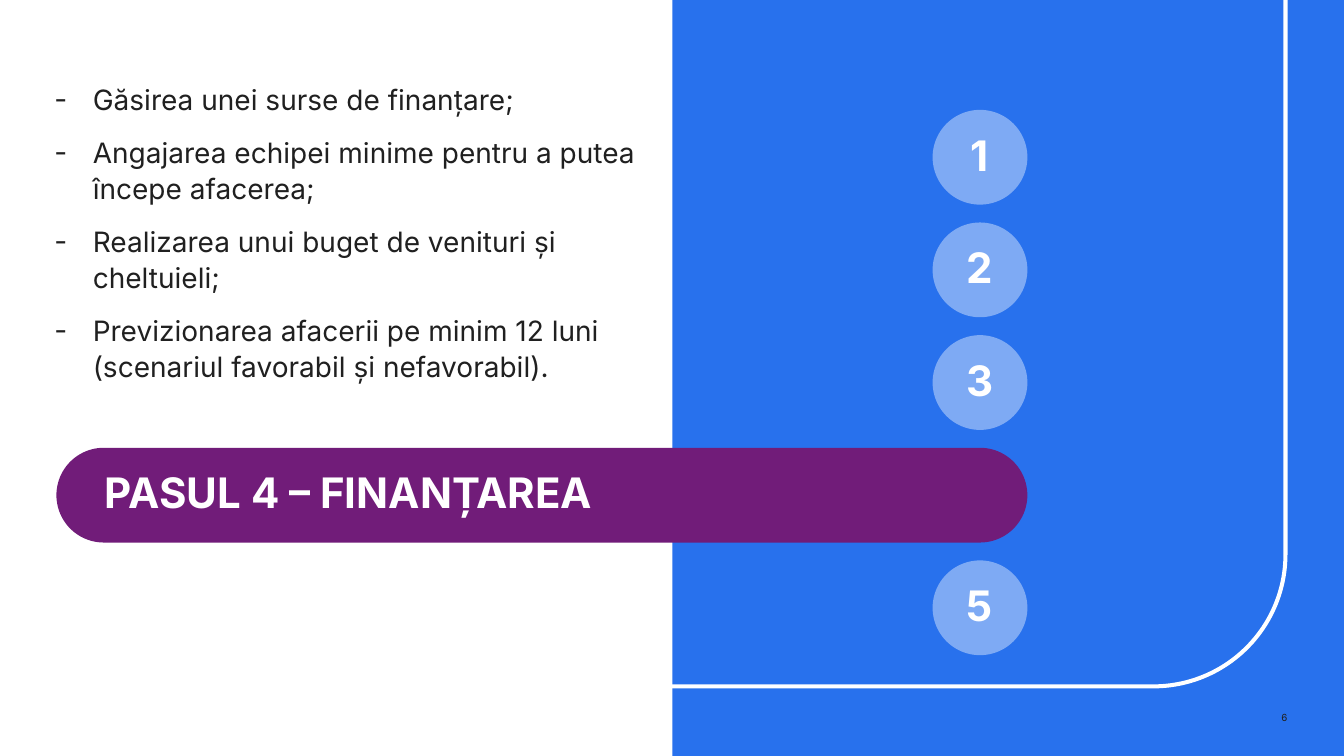
import math
from dataclasses import dataclass

from lxml import etree
from pptx import Presentation
from pptx.dml.color import RGBColor
from pptx.enum import shapes, text
from pptx.oxml import ns
from pptx.util import Inches, Pt


@dataclass(frozen=True)
class Theme:
    font: str = "Inter"
    white: RGBColor = RGBColor(0xFF, 0xFF, 0xFF)
    ink: RGBColor = RGBColor(0x20, 0x20, 0x20)
    blue: RGBColor = RGBColor(0x28, 0x71, 0xED)
    light_blue: RGBColor = RGBColor(0x7E, 0xAA, 0xF4)
    purple: RGBColor = RGBColor(0x71, 0x1C, 0x79)
    heading: int = 30
    body: int = 20
    small: int = 7


@dataclass(frozen=True)
class Box:
    left: float
    top: float
    width: float
    height: float

    def emu(self):
        return [Inches(v) for v in (self.left, self.top, self.width, self.height)]


THEME = Theme()
STEP_COUNT = 5
CURRENT_STEP = 4
TASKS = [
    "Găsirea unei surse de finanțare;",
    "Angajarea echipei minime pentru a putea începe afacerea;",
    "Realizarea unui buget de venituri și cheltuieli;",
    "Previzionarea afacerii pe minim 12 luni (scenariul favorabil și nefavorabil).",
]


def paint(shape, color):
    shape.shadow.inherit = False
    shape.fill.solid()
    shape.fill.fore_color.rgb = color
    shape.line.fill.background()


def add_filled(slide, kind, box, color):
    shape = slide.shapes.add_shape(kind, *box.emu())
    paint(shape, color)
    return shape


def place(shape, box):
    shape.left, shape.top, shape.width, shape.height = box.emu()


def prepare_frame(frame, anchor=text.MSO_ANCHOR.TOP):
    frame.margin_left = frame.margin_top = frame.margin_right = frame.margin_bottom = 0
    frame.word_wrap = True
    frame.auto_size = text.MSO_AUTO_SIZE.NONE
    frame.vertical_anchor = anchor


def style(paragraph, size, color, align, bold=False, spacing=1.0):
    paragraph.alignment = align
    paragraph.line_spacing = spacing
    paragraph.space_before = Pt(0)
    font = paragraph.font
    font.name, font.size, font.bold = THEME.font, Pt(size), bold
    font.color.rgb = color


def add_dash(paragraph, indent):
    properties = paragraph._p.get_or_add_pPr()
    properties.set("marL", str(Inches(indent)))
    properties.set("indent", str(-Inches(indent)))
    etree.SubElement(properties, ns.qn("a:buFont"), typeface=THEME.font)
    etree.SubElement(properties, ns.qn("a:buChar"), char="-")


def add_frame_line(slide, box, radius=1.33, thickness=0.04):
    """White line along the right and bottom edges, with a round corner."""
    right, bottom = box.left + box.width, box.top + box.height
    center_x, center_y = right - radius, bottom - radius
    angles = [math.radians(degree) for degree in range(0, 91, 2)]

    def corner(r, order):
        return [(center_x + r * math.cos(a), center_y + r * math.sin(a)) for a in order]

    inner = radius - thickness
    points = [
        (right, box.top),
        *corner(radius, angles),
        (box.left, bottom),
        (box.left, bottom - thickness),
        *corner(inner, reversed(angles)),
        (right - thickness, box.top),
    ]
    points = [(Inches(x), Inches(y)) for x, y in points]
    builder = slide.shapes.build_freeform(*points[0])
    builder.add_line_segments(points[1:], close=True)
    paint(builder.convert_to_shape(), THEME.white)


def add_tasks(slide, box):
    body = slide.placeholders[1]
    place(body, box)
    frame = body.text_frame
    prepare_frame(frame)
    frame.text = "\n".join(TASKS)
    for paragraph in frame.paragraphs:
        add_dash(paragraph, 0.38)
        paragraph.space_after = Pt(12)
        style(paragraph, THEME.body, THEME.ink, text.PP_ALIGN.LEFT, spacing=1.07)


def add_step_bar(slide, box):
    bar = add_filled(slide, shapes.MSO_SHAPE.ROUNDED_RECTANGLE, box, THEME.purple)
    bar.adjustments[0] = 0.5
    title = slide.shapes.title
    place(title, Box(box.left + 0.48, box.top + 0.23, box.width - 0.94, 0.48))
    prepare_frame(title.text_frame)
    title.text_frame.text = f"PASUL {CURRENT_STEP} – FINANȚAREA"
    style(title.text_frame.paragraphs[0], THEME.heading, THEME.white,
          text.PP_ALIGN.LEFT, bold=True, spacing=0.92)
    bar._element.addnext(title._element)  # keep the title above its bar


def add_steps(slide, box, bar_left):
    """Column of numbered circles; the current step is a bar reaching left."""
    size = box.width
    pitch = (box.height - size) / (STEP_COUNT - 1)
    for step in range(1, STEP_COUNT + 1):
        top = box.top + (step - 1) * pitch
        if step == CURRENT_STEP:
            add_step_bar(slide, Box(bar_left, top, box.left + size - bar_left, size))
            continue
        circle = add_filled(slide, shapes.MSO_SHAPE.OVAL,
                            Box(box.left, top, size, size), THEME.light_blue)
        prepare_frame(circle.text_frame, text.MSO_ANCHOR.MIDDLE)
        circle.text_frame.text = str(step)
        style(circle.text_frame.paragraphs[0], THEME.heading, THEME.white,
              text.PP_ALIGN.CENTER, bold=True, spacing=0.92)


def add_page_number(slide, box, number):
    frame = slide.shapes.add_textbox(*box.emu()).text_frame
    prepare_frame(frame)
    frame.text = str(number)
    style(frame.paragraphs[0], THEME.small, THEME.ink, text.PP_ALIGN.RIGHT)


def build_step_slide(presentation):
    slide = presentation.slides.add_slide(presentation.slide_layouts[1])
    # Background panel and frame
    add_filled(slide, shapes.MSO_SHAPE.RECTANGLE, Box(6.67, 0, 6.67, 7.5), THEME.blue)
    add_frame_line(slide, Box(0, 0, 12.77, 6.83))
    # Content
    add_tasks(slide, Box(0.54, 0.8, 5.8, 3.18))
    add_steps(slide, Box(9.25, 1.09, 0.94, 5.41), bar_left=0.56)
    add_page_number(slide, Box(12.36, 7.06, 0.41, 0.14), 6)


def main():
    presentation = Presentation()
    presentation.slide_width = Inches(13.33)
    presentation.slide_height = Inches(7.5)
    build_step_slide(presentation)
    presentation.save("out.pptx")


if __name__ == "__main__":
    main()
